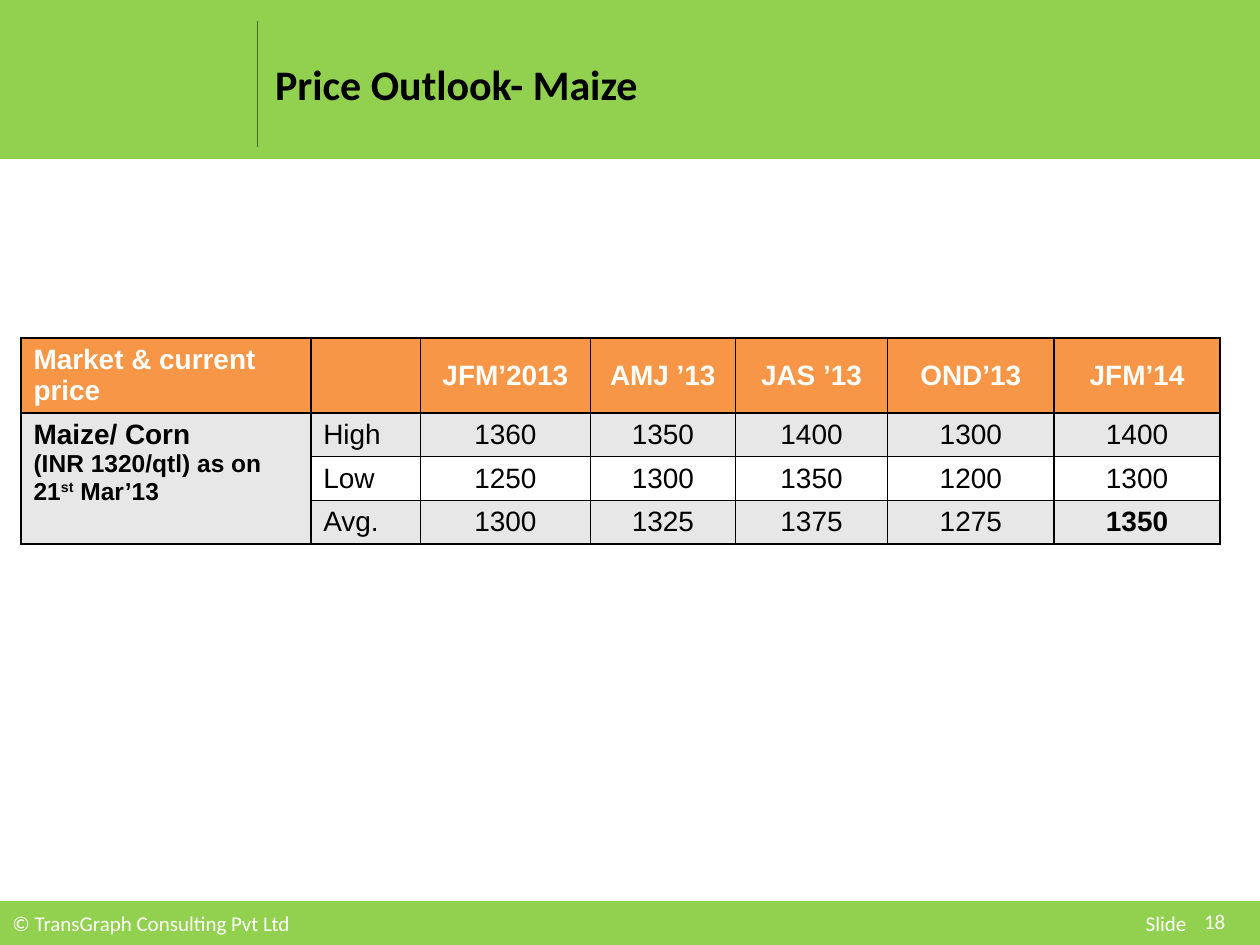
from lxml.etree import SubElement
from pptx import Presentation
from pptx.dml.color import RGBColor
from pptx.enum.shapes import MSO_CONNECTOR, MSO_SHAPE
from pptx.enum.text import MSO_ANCHOR, PP_ALIGN
from pptx.oxml.ns import qn
from pptx.util import Pt

COLORS = {
    "green": "92D050", "rule": "3F6B1F", "orange": "F79646",
    "gray": "E7E7E7", "white": "FFFFFF", "black": "000000",
}
TITLE = "Price Outlook- Maize"
FOOTER = "© TransGraph Consulting Pvt Ltd\tSlide"
SLIDE_NUMBER = "18"
HEADER = ["Market & current price", "", "JFM’2013", "AMJ ’13", "JAS ’13", "OND’13", "JFM’14"]
PRICES = [
    ("High", 1360, 1350, 1400, 1300, 1400),
    ("Low", 1250, 1300, 1350, 1200, 1300),
    ("Avg.", 1300, 1325, 1375, 1275, 1350),
]
MARKET = "Maize/ Corn"
MARKET_NOTE = [("(INR 1320/qtl) as on 21", False), ("st", True), (" Mar’13", False)]

WIDTH, HEIGHT = 720, 540
BAND_HEIGHT, FOOTER_TOP = 90, 514.8
TABLE_LEFT, TABLE_TOP = 12, 193
COLUMN_WIDTHS = [165.6, 62.6, 97.2, 82.8, 87.1, 95, 95]
ROW_HEIGHTS = [43, 25, 25, 25]


def rgb(name):
    return RGBColor.from_string(COLORS[name])


def add_span(para, text, size, color, font="Arial", bold=False):
    span = para.add_run()
    span.text = text
    span.font.name, span.font.size, span.font.bold = font, Pt(size), bold
    span.font.color.rgb = rgb(color)
    return span


def add_band(slide, top, height):
    band = slide.shapes.add_shape(MSO_SHAPE.RECTANGLE, 0, Pt(top), Pt(WIDTH), Pt(height))
    band.shadow.inherit = False
    band.fill.solid()
    band.fill.fore_color.rgb = rgb("green")
    return band


def add_header(slide):
    band = add_band(slide, 0, BAND_HEIGHT)
    band.line.color.rgb = rgb("green")
    band.line.width = Pt(2)
    rule = slide.shapes.add_connector(
        MSO_CONNECTOR.STRAIGHT, Pt(147), Pt(12), Pt(147), Pt(84))
    rule.line.color.rgb = rgb("rule")
    rule.line.width = Pt(0.75)
    SubElement(rule.element.spPr, qn("a:effectLst"))

    title = slide.shapes.title
    title.left, title.top, title.width, title.height = Pt(150), Pt(12), Pt(558), Pt(72)
    title.text_frame.vertical_anchor = MSO_ANCHOR.MIDDLE
    para = title.text_frame.paragraphs[0]
    para.alignment = PP_ALIGN.LEFT
    add_span(para, TITLE, 24, "black", "Calibri", True)
    title.element.getparent().append(title.element)  # in front of the band


def add_footer(slide):
    band = add_band(slide, FOOTER_TOP, HEIGHT - FOOTER_TOP)
    band.line.fill.background()
    number = slide.shapes.add_textbox(Pt(681), Pt(514), Pt(36), Pt(25.2))
    for box, text in ((band, FOOTER), (number, SLIDE_NUMBER)):
        frame = box.text_frame
        frame.word_wrap = True
        frame.vertical_anchor = MSO_ANCHOR.MIDDLE
        para = frame.paragraphs[0]
        para.alignment = PP_ALIGN.LEFT
        if "\t" in text:
            tabs = SubElement(para._p.get_or_add_pPr(), qn("a:tabLst"))
            SubElement(tabs, qn("a:tab"), pos=str(Pt(647.6)), algn="l")
        add_span(para, text, 12, "white", "Calibri")


def style_cell(cell, fill):
    """Draw black borders on all sides and fill the cell."""
    properties = cell._tc.get_or_add_tcPr()
    for side in ("lnL", "lnR", "lnT", "lnB"):
        line = SubElement(properties, qn(f"a:{side}"), w=str(Pt(1)))
        paint = SubElement(line, qn("a:solidFill"))
        SubElement(paint, qn("a:srgbClr"), val=COLORS["black"])
    cell.fill.solid()
    cell.fill.fore_color.rgb = rgb(fill)


def add_price_table(slide):
    table = slide.shapes.add_table(
        len(ROW_HEIGHTS), len(COLUMN_WIDTHS), Pt(TABLE_LEFT), Pt(TABLE_TOP),
        Pt(sum(COLUMN_WIDTHS)), Pt(sum(ROW_HEIGHTS))).table
    table.horz_banding = False
    for column, width in zip(table.columns, COLUMN_WIDTHS):
        column.width = Pt(width)
    for row, height in zip(table.rows, ROW_HEIGHTS):
        row.height = Pt(height)

    rows = [HEADER] + [("", *prices) for prices in PRICES]
    last = (len(rows) - 1, len(HEADER) - 1)
    for r, values in enumerate(rows):
        fill = "orange" if r == 0 else "gray" if r % 2 else "white"
        for c, value in enumerate(values):
            cell = table.cell(r, c)
            style_cell(cell, "gray" if r and c == 0 else fill)
            para = cell.text_frame.paragraphs[0]
            if c > 1:
                para.alignment = PP_ALIGN.CENTER
                if r == 0:
                    cell.vertical_anchor = MSO_ANCHOR.MIDDLE
            if value != "":
                add_span(para, str(value), 16, "black" if r else "white",
                         bold=r == 0 or (r, c) == last)

    market = table.cell(1, 0)
    market.merge(table.cell(last[0], 0))
    add_span(market.text_frame.paragraphs[0], MARKET, 16, "black", bold=True)
    note = market.text_frame.add_paragraph()
    for text, raised in MARKET_NOTE:
        span = add_span(note, text, 14, "black", bold=True)
        if raised:
            span.font._element.set("baseline", "30000")


def main():
    deck = Presentation()
    deck.slide_width, deck.slide_height = Pt(WIDTH), Pt(HEIGHT)
    slide = deck.slides.add_slide(deck.slide_layouts[5])
    add_header(slide)
    add_price_table(slide)
    add_footer(slide)
    deck.save("out.pptx")


if __name__ == "__main__":
    main()
